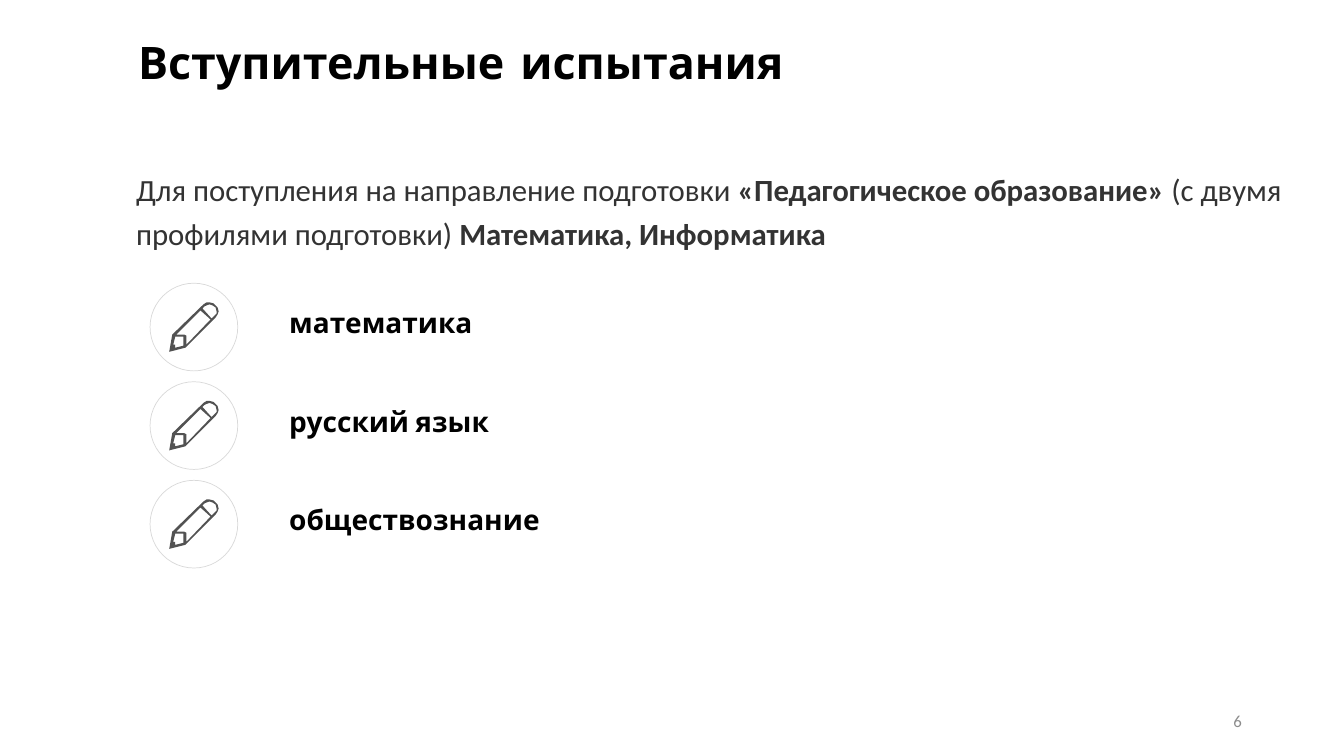
from pptx import Presentation
from pptx.dml.color import RGBColor
from pptx.enum.shapes import MSO_SHAPE as SHAPE
from pptx.enum.text import MSO_ANCHOR as ANCHOR, MSO_AUTO_SIZE as AUTO, PP_ALIGN as ALIGN
from pptx.util import Pt

PENCIL = [
    [(40, 0), (37, 0), (34, 2), (3, 32), (0, 49), (16, 45), (46, 15),
     (48, 12), (49, 9), (48, 5), (46, 3), (44, 1)],
    [(45, 13), (42, 16), (33, 6), (35, 4), (37, 3), (40, 2), (43, 3),
     (46, 5), (47, 9), (47, 11)],
    [(17, 42), (17, 33), (15, 32), (7, 32), (31, 8), (41, 17)],
    [(14, 43), (6, 45), (6, 42), (4, 42), (6, 34), (14, 34)],
]
SUBJECTS = ["математика", "русский язык", "обществознание"]


def rgb(value):
    """Turn a hex string into a colour."""
    return RGBColor.from_string(value)


def write(tf, runs, font, size, color, spacing=1.0, align=ALIGN.LEFT):
    """Fill the first paragraph with (text, bold) runs."""
    tf.word_wrap = True
    tf.auto_size = AUTO.NONE
    p = tf.paragraphs[0]
    p.alignment = align
    p.line_spacing = spacing
    for text, bold in runs:
        r = p.add_run()
        r.text = text
        r.font.name = font
        r.font.size = Pt(size)
        r.font.bold = bold
        r.font.color.rgb = rgb(color)


def add_text(s, x, y, w, h, inset=7.2):
    """Add a text box and return its frame."""
    tf = s.shapes.add_textbox(Pt(x), Pt(y), Pt(w), Pt(h)).text_frame
    tf.margin_left = tf.margin_right = Pt(inset)
    return tf


def add_title(s, x, y, w, h):
    """Place the slide title."""
    sp = s.shapes.title
    sp.left, sp.top, sp.width, sp.height = Pt(x), Pt(y), Pt(w), Pt(h)
    sp.text_frame.vertical_anchor = ANCHOR.MIDDLE
    write(sp.text_frame, [("Вступительные испытания", True)],
          "Comic Neue", 32, "000000", 0.9)


def add_intro(s, x, y, w, h):
    """Place the introductory sentence."""
    write(add_text(s, x, y, w, h, 0), [
        ("Для поступления на направление подготовки ", False),
        ("«Педагогическое образование» ", True),
        ("(с двумя профилями подготовки) ", False),
        ("Математика, Информатика", True),
    ], "Calibri", 22, "333333", 1.2)


def add_icon(s, x, y, size):
    """Draw a pencil inside a thin circle as one group."""
    group = s.shapes.add_group_shape()
    circle = group.shapes.add_shape(SHAPE.OVAL, Pt(x), Pt(y), Pt(size), Pt(size))
    circle.shadow.inherit = False
    circle.fill.background()
    circle.line.color.rgb = rgb("D9D9D9")
    circle.line.width = Pt(0.5)

    unit = size / 87
    first, *holes = PENCIL
    builder = group.shapes.build_freeform(*first[0], scale=Pt(unit))
    builder.add_line_segments(first[1:])
    for hole in holes:
        builder.move_to(*hole[0])
        builder.add_line_segments(hole[1:])
    pencil = builder.convert_to_shape(Pt(x + 19 * unit), Pt(y + 19 * unit))
    pencil.shadow.inherit = False
    pencil.fill.solid()
    pencil.fill.fore_color.rgb = rgb("525252")
    pencil.line.fill.background()


def add_subjects(s, x, y, w, h):
    """Stack the exam subjects, each with its icon, in equal rows."""
    pitch = h / len(SUBJECTS)
    for i, subject in enumerate(SUBJECTS):
        top = y + i * pitch
        add_icon(s, x, top, 62.64)
        write(add_text(s, x + 99.4, top + 19.2, w - 99.4, 24.5, 0),
              [(subject, True)], "Cabin", 20, "000000", 0.7)


def add_number(s, x, y, w, h):
    """Place the slide number."""
    tf = add_text(s, x, y, w, h)
    tf.vertical_anchor = ANCHOR.MIDDLE
    write(tf, [("6", False)], "Calibri", 12, "8C8C8C", align=ALIGN.RIGHT)


def main():
    """Build and save the presentation."""
    prs = Presentation()
    prs.slide_width, prs.slide_height = Pt(960), Pt(540)
    s = prs.slides.add_slide(prs.slide_layouts[5])
    add_intro(s, 97.2, 113, 831.6, 68.4)
    add_number(s, 678.2, 500.4, 216, 28.8)
    add_title(s, 91.4, 9.4, 627, 73.4)
    add_subjects(s, 107.2, 202.3, 312.6, 211.2)
    prs.save("out.pptx")


if __name__ == "__main__":
    main()
